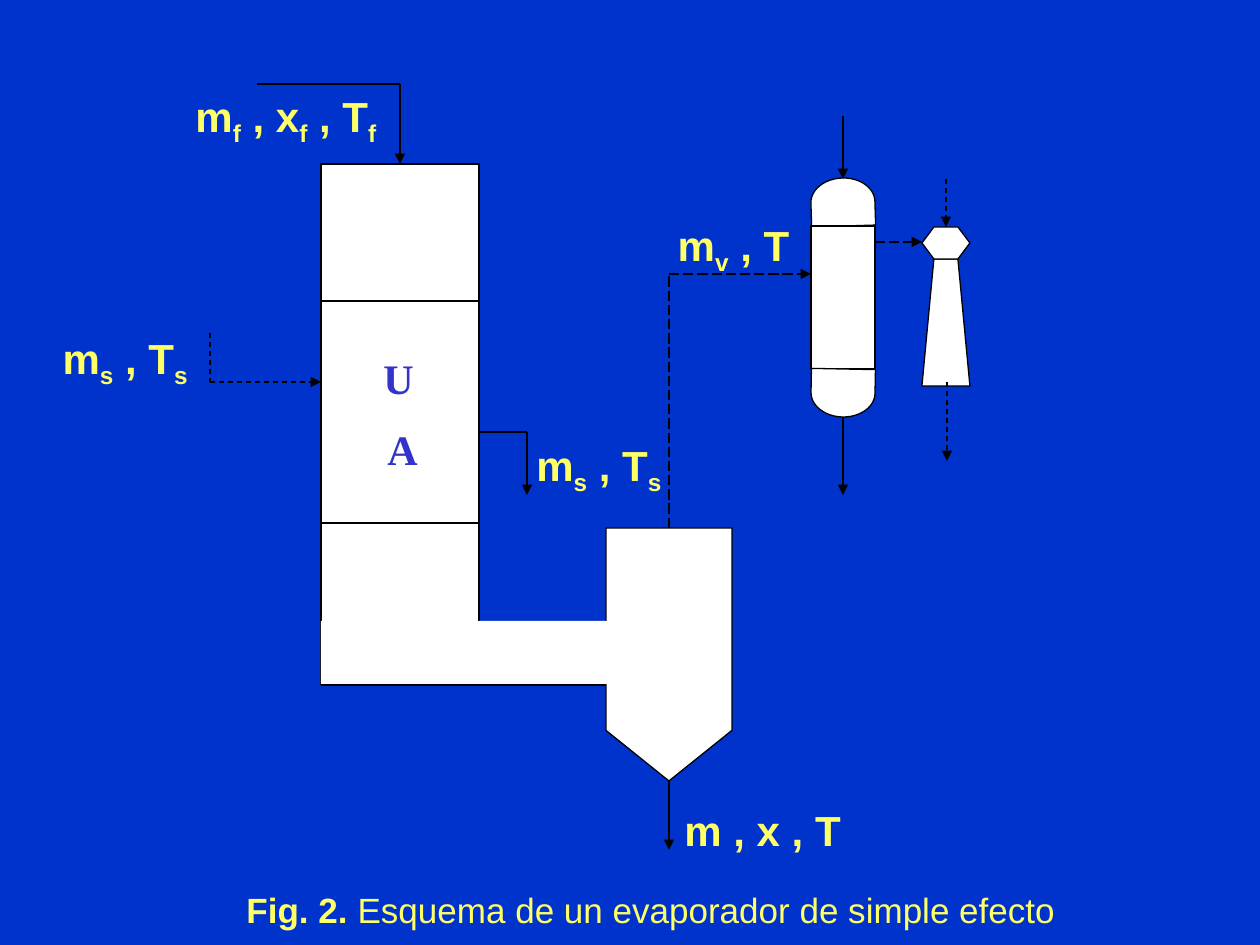
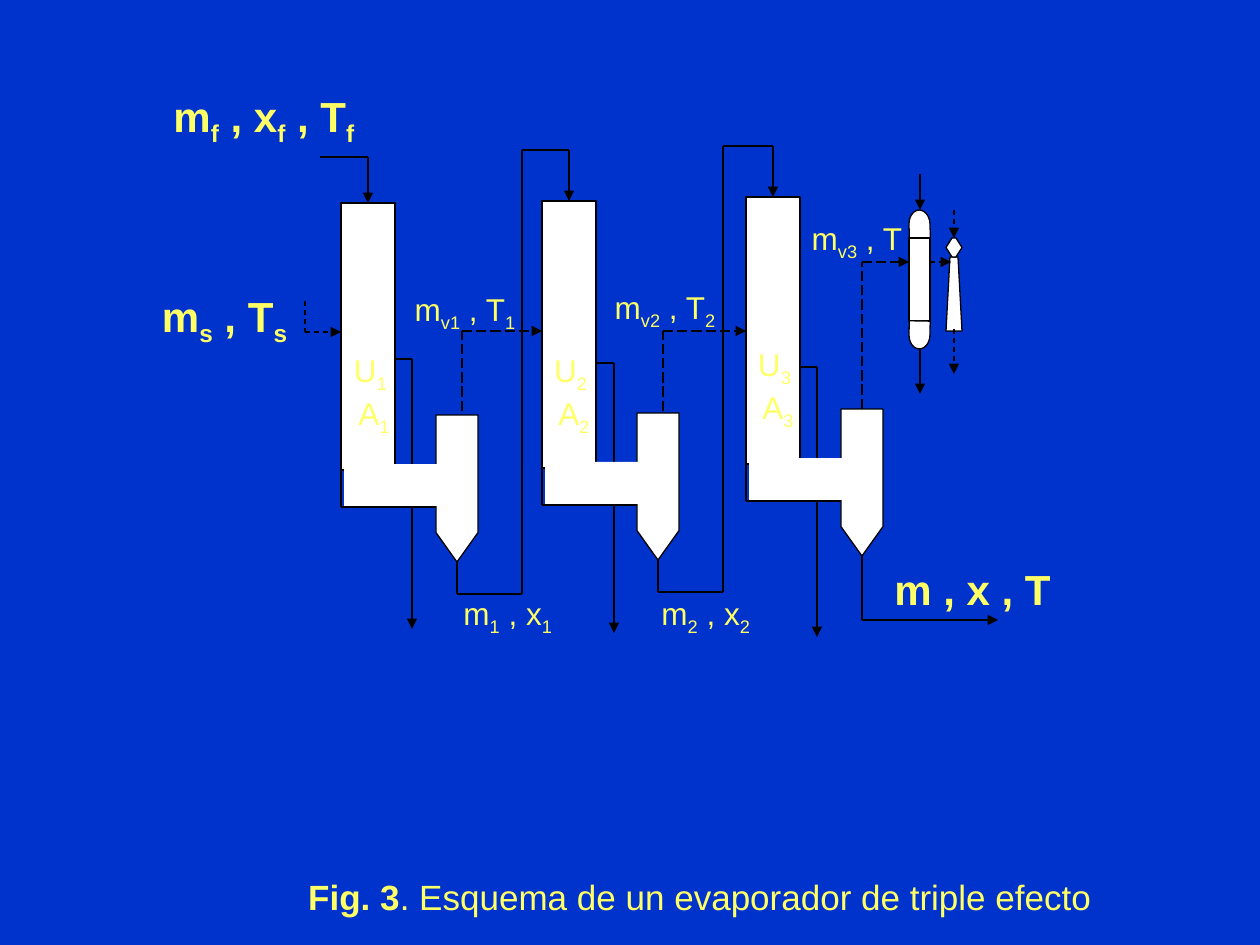
import pptx
import pptx.util
import pptx.dml.color
import pptx.enum.dml
import pptx.enum.shapes
import pptx.enum.text
import pptx.oxml.ns
import lxml.etree

SHAPE = pptx.enum.shapes.MSO_SHAPE
DASH = pptx.enum.dml.MSO_LINE
ALIGN = pptx.enum.text.PP_ALIGN
TOP, BOTTOM = 0, 2
EMU_PER_PX = 914400 / 126

COLORS = {"background": "0033CC", "vessel": "FFFFFF", "line": "000000",
          "text": "FFFF66", "jacket": "3333CC"}

# style: font, size, bold, colour
STYLES = {
    "stream": ("Arial", 24, True, "text"),
    "inner": ("Arial", 18, False, "text"),
    "jacket": ("Times New Roman", 24, True, "jacket"),
    "caption": ("Arial", 20, False, "text"),
}

# Every second piece between bars is a subscript, or bold in a caption.
# Boxes are left, top, width, height; vessel parts are offset from the column.
FIGURES = [
    {
        "columns": [(321, 164)],
        "column_size": (158, 460),
        "duct": (0, 457, 302, 63),
        "separator": (285, 364, 126, 253),
        "drains": [[(479, 432), (527, 432), (527, 495)]],
        "dividers": [301, 523],
        "feed": [(257, 84), (400, 84)],
        "vapour": [(669, 274), (811, 274)],
        "product": [(669, 850)],
        "condenser": (811, 226, 64, 143),
        "cap": 48,
        "ejector": (922, 227, 48, 32),
        "cone_height": 127,
        "flows": [
            (DASH.DASH, [(210, 333), (210, 382), (321, 382)]),
            (None, [(843, 116), (843, 179)]),
            (None, [(843, 417), (843, 495)]),
            (DASH.LONG_DASH, [(875, 242), (922, 242)]),
            (DASH.DASH, [(946, 179), (946, 227)]),
            (DASH.DASH, [(947, 382), (947, 461)]),
        ],
        "labels": [
            ("stream", (183, 84, 268, 53), ALIGN.LEFT, "m|f| , x|f| , T|f"),
            ("stream", (31, 326, 169, 53), ALIGN.RIGHT, "m|s| , T|s"),
            ("stream", (624, 213, 219, 64), ALIGN.CENTER, "m|v| , T"),
            ("stream", (504, 433, 190, 60), ALIGN.CENTER, "m|s| , T|s"),
            ("stream", (672, 798, 284, 84), ALIGN.LEFT, "m , x , T"),
            ("jacket", (346, 346, 105, 139), ALIGN.CENTER, "U\n A"),
            ("caption", (126, 882, 1050, 54), ALIGN.CENTER,
             "|Fig. 2.| Esquema de un evaporador de simple efecto"),
        ],
    },
    {
        "columns": [(341, 203), (542, 201), (746, 197)],
        "column_size": (54, 267),
        "duct": (3, 261, 105, 42),
        "separator": (95, 212, 42, 147),
        "drains": [[(x, y), (x + 17, y), (x + 17, y + 270)]
                   for x, y in [(395, 359), (597, 363), (800, 367)]],
        "dividers": [],
        "feed": [(320, 157), (368, 157)],
        "vapour": [(862, 262), (909, 262)],
        "product": [(862, 620), (998, 620)],
        "condenser": (909, 238, 21, 83),
        "cap": 28,
        "ejector": (946, 238, 16, 19),
        "cone_height": 74,
        "flows": [
            (DASH.DASH, [(305, 301), (305, 332), (341, 332)]),
            (None, [(920, 174), (920, 210)]),
            (None, [(920, 348), (920, 394)]),
            (DASH.DASH, [(930, 262), (951, 262)]),
            (DASH.DASH, [(954, 210), (954, 238)]),
            (DASH.DASH, [(954, 329), (954, 374)]),
        ],
        "labels": [
            ("stream", (161, 84, 248, 63), ALIGN.LEFT, "m|f| , x|f| , T|f"),
            ("stream", (134, 284, 181, 63), ALIGN.CENTER, "m|s| , T|s"),
            ("inner", (399, 284, 132, 48), ALIGN.CENTER, "m|v1| , T|1"),
            ("inner", (599, 282, 132, 48), ALIGN.CENTER, "m|v2| , T|2"),
            ("inner", (789, 213, 136, 48), ALIGN.CENTER, "m|v3| , T"),
            ("inner", (451, 588, 142, 48), ALIGN.LEFT, "m|1| , x|1"),
            ("inner", (649, 588, 142, 48), ALIGN.LEFT, "m|2| , x|2"),
            ("stream", (882, 557, 231, 63), ALIGN.LEFT, "m , x , T"),
            ("inner", (339, 345, 63, 111), ALIGN.CENTER, "U|1|\n A|1"),
            ("inner", (539, 345, 63, 111), ALIGN.CENTER, "U|2|\n A|2"),
            ("inner", (743, 339, 63, 111), ALIGN.CENTER, "U|3|\n A|3"),
            ("caption", (200, 869, 1000, 54), ALIGN.CENTER,
             "|Fig. 3|. Esquema de un evaporador de triple efecto"),
        ],
    },
]


def px(n):
    return pptx.util.Emu(round(n * EMU_PER_PX))


def color(name):
    return pptx.dml.color.RGBColor.from_string(COLORS[name])


def style_vessel(sp, outlined=True):
    sp.shadow.inherit = False
    sp.fill.solid()
    sp.fill.fore_color.rgb = color("vessel")
    if outlined:
        sp.line.color.rgb = color("line")
        sp.line.width = pptx.util.Pt(0.75)
    else:
        sp.line.fill.background()
    return sp


def add_vessel(slide, kind, box, outlined=True):
    sp = slide.shapes.add_shape(kind, *map(px, box))
    return style_vessel(sp, outlined)


def add_pipe(slide, points, dash=None, arrow=True, start=None, end=None):
    """Draw straight segments; start and end are (shape, site) joins."""
    segments = list(zip(points, points[1:]))
    for i, (a, b) in enumerate(segments):
        last = i == len(segments) - 1
        line = slide.shapes.add_connector(
            pptx.enum.shapes.MSO_CONNECTOR.STRAIGHT, *map(px, a + b))
        line.line.color.rgb = color("line")
        line.line.width = pptx.util.Pt(0.75)
        if dash:
            line.line.dash_style = dash
        if arrow and last:
            ln = line.line._get_or_add_ln()
            lxml.etree.SubElement(ln, pptx.oxml.ns.qn("a:tailEnd"), type="triangle")
        lxml.etree.SubElement(line._element.spPr, pptx.oxml.ns.qn("a:effectLst"))
        if start and i == 0:
            line.begin_connect(*start)
        if end and last:
            line.end_connect(*end)


def add_label(slide, style, box, align, text):
    font, size, bold, ink = STYLES[style]
    tf = slide.shapes.add_textbox(*map(px, box)).text_frame
    tf.word_wrap = True
    for i, row in enumerate(text.split("\n")):
        p = tf.add_paragraph() if i else tf.paragraphs[0]
        p.alignment = align
        if i and style == "jacket":
            p.space_before = pptx.util.Pt(12)
        for j, piece in enumerate(row.split("|")):
            if not piece:
                continue
            r = p.add_run()
            r.text = piece
            r.font.name = font
            r.font.size = pptx.util.Pt(size)
            r.font.color.rgb = color(ink)
            marked = j % 2 == 1
            r.font.bold = bold or (marked and style == "caption")
            if marked and style != "caption":
                r._r.get_or_add_rPr().set("baseline", "-25000")


def add_evaporator(slide, fig, x, y, drain):
    """Draw one effect and return its column and separator."""
    width, height = fig["column_size"]
    duct_x, duct_y, duct_w, duct_h = fig["duct"]
    sep_x, sep_y, sep_w, sep_h = fig["separator"]
    base = y + duct_y + duct_h + 1
    column = add_vessel(slide, SHAPE.RECTANGLE, (x, y, width, height))
    for divider in fig["dividers"]:
        add_pipe(slide, [(x, divider), (x + width, divider)], arrow=False)
    add_pipe(slide, [(x, y + duct_y), (x, base), (x + sep_x, base)], arrow=False)
    add_pipe(slide, drain)
    separator = add_vessel(slide, SHAPE.FLOWCHART_OFFPAGE_CONNECTOR,
                           (x + sep_x, y + sep_y, sep_w, sep_h))
    add_vessel(slide, SHAPE.RECTANGLE, (x + duct_x, y + duct_y, duct_w, duct_h),
               outlined=False)
    return column, separator


def add_condenser(slide, box, cap):
    x, y, w, h = box
    left = x + (w - cap) / 2

    def add_cap(middle, rotation):
        sp = add_vessel(slide, SHAPE.FLOWCHART_DELAY, (left, middle - w / 2, cap, w))
        sp.rotation = rotation

    add_cap(y - cap / 2, 268.3)
    add_vessel(slide, SHAPE.RECTANGLE, box)
    add_cap(y + h + cap / 2, 91.1)


def add_ejector(slide, box, cone_height):
    x, y, w, h = box
    neck, foot = y + h, y + h + cone_height
    outline = [(x + w, foot), (x + w * 3 / 4, neck), (x + w / 4, neck), (x, foot)]
    points = [(px(a), px(b)) for a, b in outline]
    builder = slide.shapes.build_freeform(*points[0])
    builder.add_line_segments(points[1:], close=True)
    style_vessel(builder.convert_to_shape())
    add_vessel(slide, SHAPE.HEXAGON, box).adjustments[0] = 0.375


def add_figure(slide, fig):
    sep_x, sep_y, sep_w, sep_h = fig["separator"]
    half = fig["column_size"][0] // 2
    columns = fig["columns"]
    effects = [add_evaporator(slide, fig, x, y, drain)
               for (x, y), drain in zip(columns, fig["drains"])]

    def outlet(i, at_bottom):
        x, y = columns[i]
        return x + sep_x + sep_w // 2, y + sep_y + (sep_h if at_bottom else 0)

    def inlet(i):
        return columns[i][0] + half, columns[i][1]

    add_condenser(slide, fig["condenser"], fig["cap"])
    add_ejector(slide, fig["ejector"], fig["cone_height"])
    add_pipe(slide, fig["feed"] + [inlet(0)], end=(effects[0][0], TOP))
    for i in range(len(columns) - 1):
        x, y = outlet(i, True)
        next_x, next_y = inlet(i + 1)
        add_pipe(slide, [(x, y), (x, y + 32), (x + 65, y + 32),
                         (x + 65, next_y - 51), (next_x, next_y - 51),
                         (next_x, next_y)],
                 start=(effects[i][1], BOTTOM), end=(effects[i + 1][0], TOP))
        vapour_x = x + 5
        add_pipe(slide, [(vapour_x, 411), (vapour_x, 331), (next_x - half, 331)],
                 DASH.LONG_DASH)
    last = effects[-1][1]
    add_pipe(slide, [outlet(-1, False)] + fig["vapour"], DASH.LONG_DASH,
             start=(last, TOP))
    add_pipe(slide, [outlet(-1, True)] + fig["product"], start=(last, BOTTOM))
    for dash, points in fig["flows"]:
        add_pipe(slide, points, dash)
    for label in fig["labels"]:
        add_label(slide, *label)


def main():
    prs = pptx.Presentation()
    prs.slide_width, prs.slide_height = px(1260), px(945)
    fill = prs.slide_master.background.fill
    fill.solid()
    fill.fore_color.rgb = color("background")
    for fig in FIGURES:
        add_figure(prs.slides.add_slide(prs.slide_layouts[6]), fig)
    prs.save("out.pptx")


if __name__ == "__main__":
    main()
